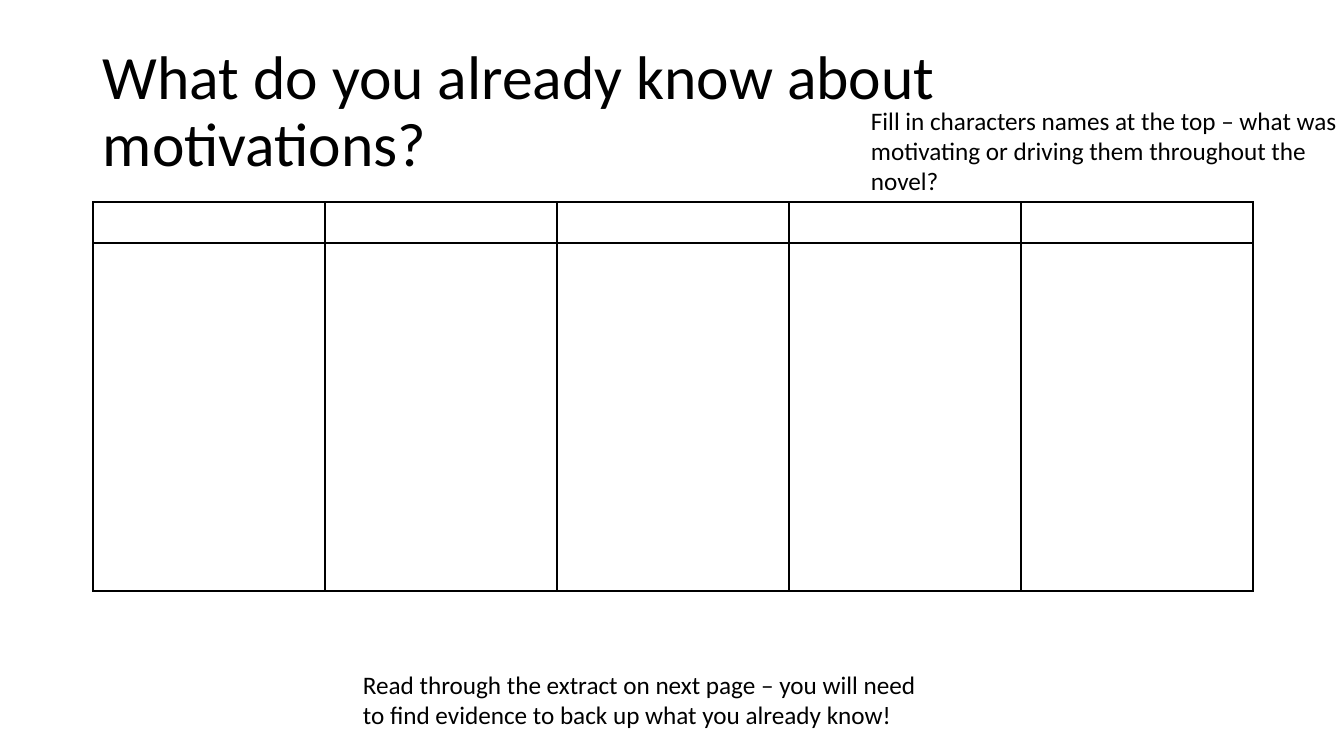
from dataclasses import dataclass

from lxml import etree
from pptx import Presentation
from pptx import util as u
from pptx.dml.color import RGBColor
from pptx.enum import text
from pptx.oxml.ns import qn

PX = 914400 / 100.8  # EMU per pixel


@dataclass(frozen=True)
class Theme:
    font: str = "Calibri"
    ink: str = "000000"
    title_size: int = 44
    body_size: int = 18
    border_width: int = 1


THEME = Theme()


def px(length):
    return u.Emu(round(length * PX))


def add_text(page, box, words, size, anchor=text.MSO_ANCHOR.TOP, line_spacing=1.0):
    frame = page.shapes.add_textbox(*map(px, box)).text_frame
    frame.word_wrap = True
    frame.vertical_anchor = anchor
    para = frame.paragraphs[0]
    para.text = words
    para.line_spacing = line_spacing
    para.font.name = THEME.font
    para.font.size = u.Pt(size)
    para.font.color.rgb = RGBColor.from_string(THEME.ink)


def outline_cell(cell):
    cell.fill.background()
    properties = cell._tc.get_or_add_tcPr()
    # Borders come before the fill in the cell properties
    for index, side in enumerate(("a:lnL", "a:lnR", "a:lnT", "a:lnB")):
        line = etree.Element(qn(side), w=str(u.Pt(THEME.border_width)))
        fill = etree.SubElement(line, qn("a:solidFill"))
        etree.SubElement(fill, qn("a:srgbClr"), val=THEME.ink)
        properties.insert(index, line)


def add_character_grid(page, box, columns, header_height):
    left, top, width, height = box
    grid = page.shapes.add_table(2, columns, *map(px, box)).table
    grid.first_row = False
    grid.horz_banding = False
    for column in grid.columns:
        column.width = px(width / columns)
    grid.rows[0].height = px(header_height)
    grid.rows[1].height = px(height - header_height)
    for cell in grid.iter_cells():
        outline_cell(cell)


def add_motivations_slide(deck, box):
    left, top, width, height = box
    page = deck.slides.add_slide(deck.slide_layouts[6])
    margin = 93
    inner = width - 2 * margin + 2

    # Title
    add_text(page, (left + margin, top + 40, inner, 146),
             "What do you already know about motivations?",
             THEME.title_size, text.MSO_ANCHOR.MIDDLE, 0.9)

    # Table to fill in, one column per character
    add_character_grid(page, (left + margin, top + 202, inner, 389), 5, 41)

    # Instructions above and below the table
    add_text(page, (left + 861, top + 100, 505, 102),
             "Fill in characters names at the top – what was motivating "
             "or driving them throughout the novel?", THEME.body_size)
    add_text(page, (left + 353, top + 664, 593, 72),
             "Read through the extract on next page – you will need "
             "to find evidence to back up what you already know!", THEME.body_size)


def main():
    deck = Presentation()
    width, height = 1344, 756
    deck.slide_width, deck.slide_height = px(width), px(height)
    add_motivations_slide(deck, (0, 0, width, height))
    deck.save("out.pptx")


if __name__ == "__main__":
    main()
